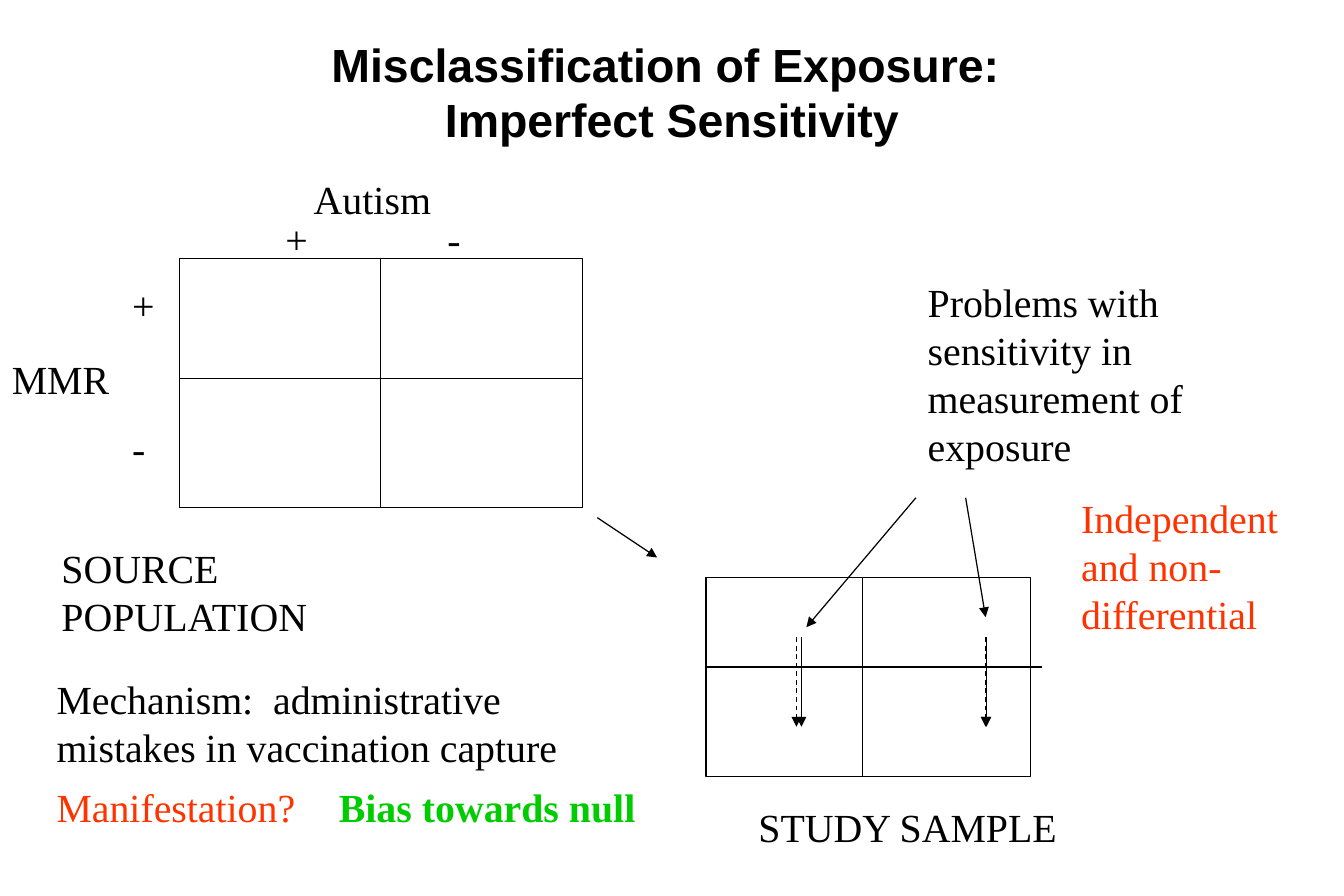
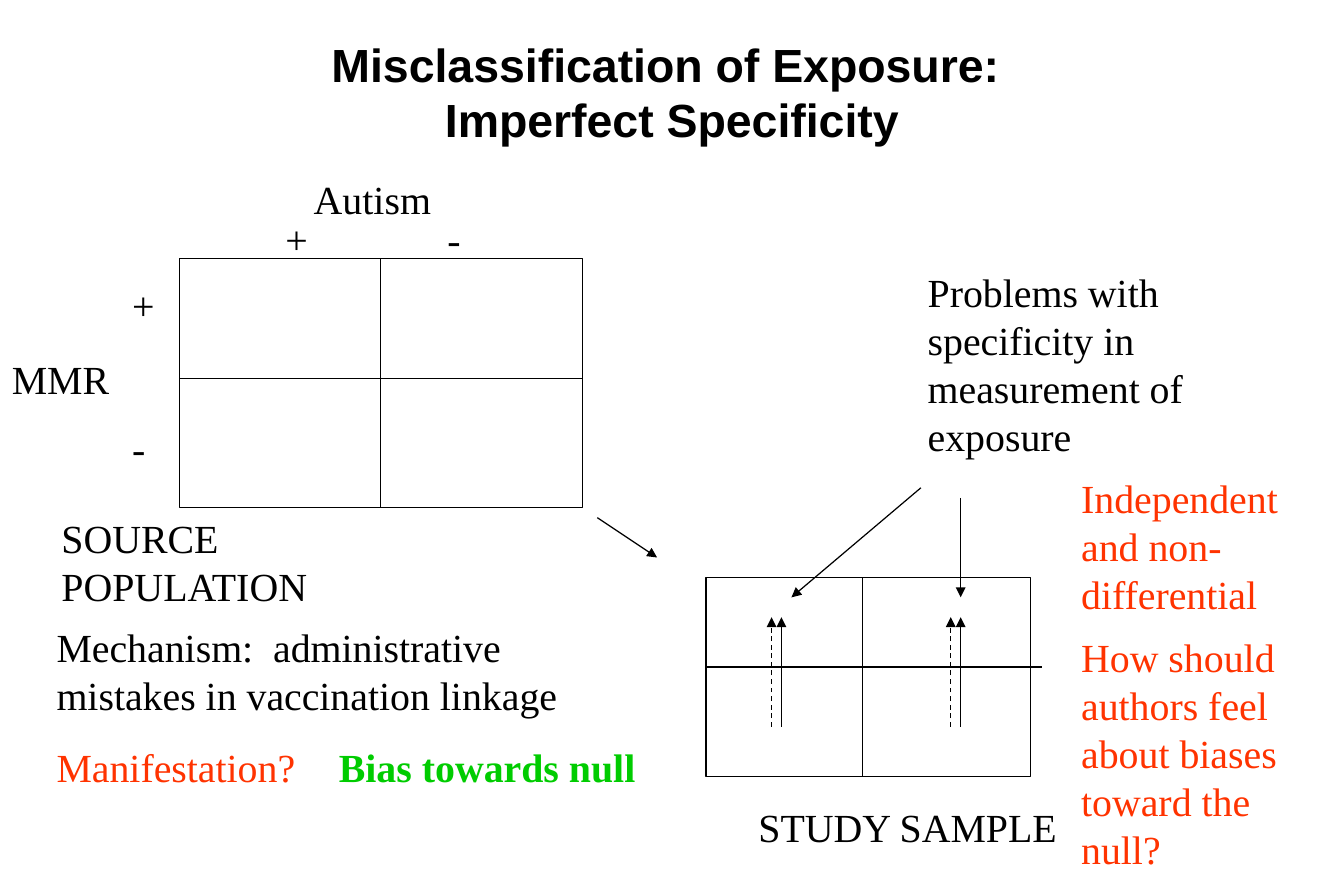
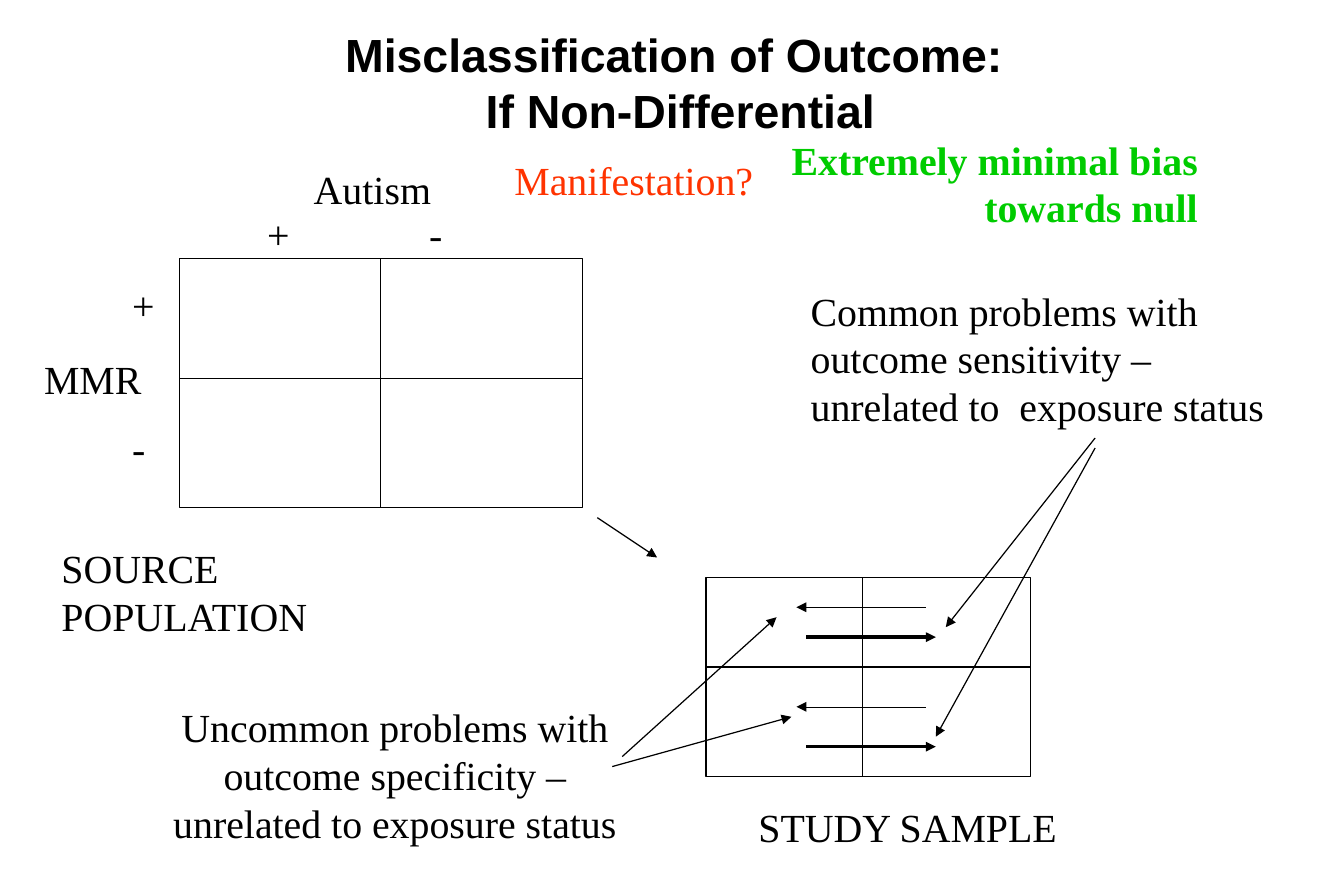
from collections import namedtuple
from dataclasses import dataclass

from lxml.etree import SubElement
from pptx import Presentation
from pptx.dml.color import RGBColor
from pptx.enum.dml import MSO_LINE
from pptx.enum.shapes import MSO_CONNECTOR, MSO_SHAPE
from pptx.enum.text import MSO_AUTO_SIZE, PP_ALIGN
from pptx.oxml.ns import qn
from pptx.util import Pt

Box = namedtuple("Box", "left top width height")


@dataclass(frozen=True)
class Theme:
    ink: RGBColor = RGBColor(0x00, 0x00, 0x00)
    question: RGBColor = RGBColor(0xFF, 0x33, 0x00)
    answer: RGBColor = RGBColor(0x00, 0xCC, 0x00)
    title_font: str = "Arial"
    body_font: str = "Times New Roman"
    title_size: float = 28
    body_size: float = 24
    line_step: float = 28.8
    thin: float = 0.25
    regular: float = 0.75
    thick: float = 2


THEME = Theme()
SOURCE = Box(108, 156, 243, 150)
STUDY = Box(425.5, 348, 195.5, 120)


def add_text(page, box, *lines, color=THEME.ink, font=THEME.body_font,
             size=THEME.body_size, bold=False, align=PP_ALIGN.LEFT):
    shape = page.shapes.add_textbox(*map(Pt, box))
    frame = shape.text_frame
    frame.word_wrap = True
    frame.auto_size = MSO_AUTO_SIZE.SHAPE_TO_FIT_TEXT
    frame.text = "\n".join(lines)
    for para in frame.paragraphs:
        para.alignment = align
        para.font.name = font
        para.font.size = Pt(size)
        para.font.bold = bold
        para.font.color.rgb = color
    return frame


def add_line(page, box, route, width=THEME.regular, dash=None, arrow=False):
    """Draw a route (x1, y1, x2, y2) measured from the corner of the box."""
    x1, y1, x2, y2 = route
    line = page.shapes.add_connector(
        MSO_CONNECTOR.STRAIGHT, Pt(box.left + x1), Pt(box.top + y1),
        Pt(box.left + x2), Pt(box.top + y2))
    line.line.color.rgb = THEME.ink
    line.line.width = Pt(width)
    if dash:
        line.line.dash_style = dash
    properties = line._element.spPr
    if arrow:
        SubElement(properties.find(qn("a:ln")), qn("a:tailEnd"), type="triangle")
    SubElement(properties, qn("a:effectLst"))
    return line


def add_arrows(page, box, routes, **style):
    for route in routes:
        add_line(page, box, route, arrow=True, **style)


def add_frame(page, box):
    frame = page.shapes.add_shape(MSO_SHAPE.RECTANGLE, *map(Pt, box))
    frame.shadow.inherit = False
    frame.fill.background()
    frame.line.color.rgb = THEME.ink
    frame.line.width = Pt(THEME.regular)
    return frame


def add_title(page, left, top, *lines):
    add_text(page, Box(left, top, 424, 74), *lines, font=THEME.title_font,
             size=THEME.title_size, bold=True, align=PP_ALIGN.CENTER)


def add_source_table(page, box, outcome_top=-54, exposure_left=-108,
                     signs=(57, -30), caption_top=168):
    """Two-by-two table of the source population, with its labels."""
    frame = add_frame(page, box)
    middle = box.width / 2
    divider = add_line(page, box, (middle, 0, middle, box.height))
    divider.begin_connect(frame, 0)
    divider.end_connect(frame, 2)
    add_line(page, box, (0, 72, box.width, 72))

    def label(left, top, width, height, *lines):
        return add_text(page, Box(box.left + left, box.top + top, width, height), *lines)

    label(74, outcome_top, 88, 36, "Autism")
    label(exposure_left, 54, 76, 36, "MMR")
    columns = label(*signs, 128, 36, "+\t-").paragraphs[0]
    tabs = SubElement(columns._p.get_or_add_pPr(), qn("a:tabLst"))
    SubElement(tabs, qn("a:tab"), pos=str(Pt(97.5)), algn="l")
    # The lower sign sits two text lines further down, in the second row.
    rows = label(-35.5, 9.5, 31.5, 122.4, "+", "-")
    rows.paragraphs[1].space_before = Pt(2 * THEME.line_step)
    label(-78, caption_top, 180, 65, "SOURCE POPULATION")
    add_arrows(page, box, [(box.width + 9, box.height + 6,
                            box.width + 45, box.height + 30)])


def add_study_table(page, box, overhang=0):
    add_frame(page, box)
    add_line(page, box, (94.5, 0, 94.5, box.height))
    add_line(page, box, (0, 54, box.width + overhang, 54))
    add_text(page, Box(box.left + 24.5, box.top + 132, 198, 36), "STUDY SAMPLE")


def add_shifts(page, box, pairs, start, end):
    """Dashed and solid vertical arrows, one pair for each column."""
    for dashed, solid in pairs:
        add_arrows(page, box, [(dashed, start, dashed, end)], dash=MSO_LINE.DASH)
        add_arrows(page, box, [(solid, start, solid, end)])


def add_verdict(page, box, answer, answer_box):
    add_text(page, box, "Manifestation?", color=THEME.question)
    add_text(page, answer_box, answer, color=THEME.answer, bold=True,
             align=PP_ALIGN.RIGHT)


def new_page(deck):
    return deck.slides.add_slide(deck.slide_layouts[6])


def add_exposure_slide(deck, measure, activity, caption_top, problem_top,
                       mechanism_top, verdict_top, remarks, pointers, shifts):
    page = new_page(deck)
    add_title(page, 189, 18, "Misclassification of Exposure:",
              f" Imperfect {measure.capitalize()}")
    add_source_table(page, SOURCE, caption_top=caption_top)
    add_study_table(page, STUDY, overhang=7)
    add_text(page, Box(552, problem_top, 204, 124),
             f"Problems with {measure} in measurement of exposure")
    add_text(page, Box(27, mechanism_top, 324, 65),
             f"Mechanism:  administrative mistakes in vaccination {activity}")
    add_verdict(page, Box(27, verdict_top, 357, 36), "Bias towards null",
                Box(189, verdict_top, 201, 36))
    for top, height, remark in remarks:
        add_text(page, Box(644.5, top, 163, height), remark, color=THEME.question)
    add_arrows(page, STUDY, pointers)
    add_shifts(page, STUDY, *shifts)


def add_outcome_slide(deck):
    page = new_page(deck)
    add_title(page, 198, 12, "Misclassification of Outcome: ", "If Non-Differential")
    add_source_table(page, SOURCE, outcome_top=-60, exposure_left=-88.5,
                     signs=(46, -33))
    add_study_table(page, STUDY)
    add_text(page, Box(481.5, 169, 307.5, 94),
             "Common problems with outcome sensitivity –unrelated to  exposure status")
    add_text(page, Box(83.5, 420, 309, 94),
             "Uncommon problems with outcome specificity – unrelated to exposure status",
             align=PP_ALIGN.CENTER)
    add_verdict(page, Box(303, 90, 357, 36), "Extremely minimal bias towards null",
                Box(435, 78, 294, 65))
    add_arrows(page, STUDY, [(132.5, y, 54.5, y) for y in (18, 78)], width=THEME.thin)
    add_arrows(page, STUDY, [(60.5, y, 138.5, y) for y in (36, 102)], width=THEME.thick)
    add_arrows(page, STUDY, [(-50.5, 108, 42.5, 24), (-56.5, 114, 51.5, 84),
                             (234.5, -84, 144.5, 30), (234.5, -78, 138.5, 96)])


def main():
    deck = Presentation()
    deck.slide_width, deck.slide_height = Pt(810), Pt(540)
    independent = "Independent and non-differential"
    add_exposure_slide(
        deck, "sensitivity", "capture", caption_top=168, problem_top=164,
        mechanism_top=403, verdict_top=468, remarks=[(294, 94, independent)],
        pointers=[(126.5, -48, 60.5, 30), (156.5, -48, 168.5, 24)],
        shifts=([(54.5, 57.5), (168.5, 169)], 36, 90))
    add_exposure_slide(
        deck, "specificity", "linkage", caption_top=150, problem_top=158,
        mechanism_top=372, verdict_top=444,
        remarks=[(282, 94, independent),
                 (378, 152, "How should authors feel about biases toward the null?")],
        pointers=[(129.5, -54, 51.5, 12), (153.5, -48, 153.5, 12)],
        shifts=([(39.5, 45.5), (147.5, 153.5)], 90, 24))
    add_outcome_slide(deck)
    deck.save("out.pptx")


if __name__ == "__main__":
    main()
